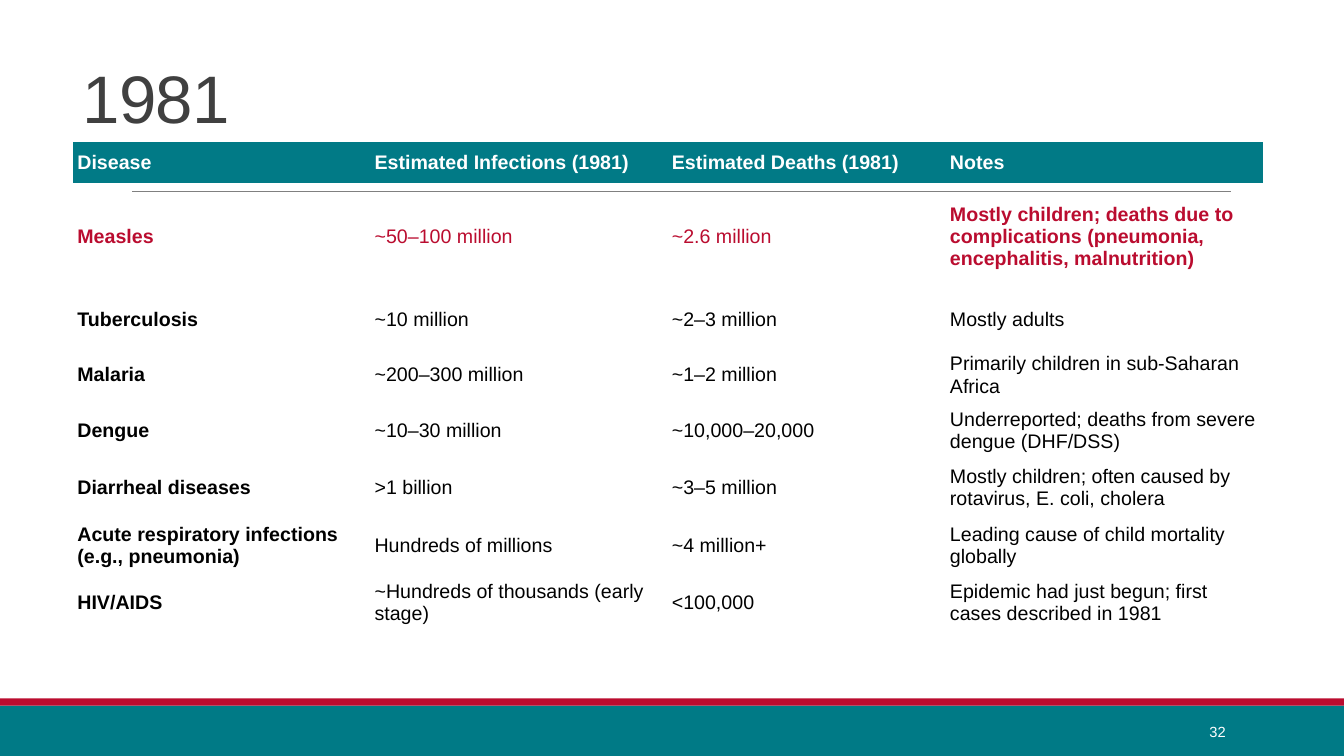
from pptx import Presentation
from pptx import util as u
from pptx.dml.color import RGBColor
from pptx.enum import shapes, text
from pptx.oxml.ns import qn
from lxml import etree

HUES = {
    "teal": "007A86", "head": "017A86", "red": "BA0C2F", "rule": "808080",
    "title": "404040", "black": "000000", "white": "FFFFFF",
}
PLAIN = "{2D5ABB26-0587-4C30-8999-92F81FD0307C}"
COLS = [7.49, 7.49, 7.01, 8]
TALL = [1.02, 2.74, 1.45, 1.27] + [1.45] * 4
ROWS = [
    ["Disease", "Estimated Infections (1981)", "Estimated Deaths (1981)", "Notes"],
    ["Measles", "~50–100 million", "~2.6 million",
     "Mostly children; deaths due to complications (pneumonia, encephalitis, malnutrition)"],
    ["Tuberculosis", "~10 million", "~2–3 million", "Mostly adults"],
    ["Malaria", "~200–300 million", "~1–2 million",
     "Primarily children in sub-Saharan Africa"],
    ["Dengue", "~10–30 million", "~10,000–20,000",
     "Underreported; deaths from severe dengue (DHF/DSS)"],
    ["Diarrheal diseases", ">1 billion", "~3–5 million",
     "Mostly children; often caused by rotavirus, E. coli, cholera"],
    ["Acute respiratory infections (e.g., pneumonia)", "Hundreds of millions",
     "~4 million+", "Leading cause of child mortality globally"],
    ["HIV/AIDS", "~Hundreds of thousands (early stage)", "<100,000",
     "Epidemic had just begun; first cases described in 1981"],
]


def put(item, **values):
    for name, value in values.items():
        setattr(item, name, value)


class Deck:
    font = "Arial"

    def __init__(self, wide, high):
        self.deck = Presentation()
        put(self.deck, slide_width=u.Cm(wide), slide_height=u.Cm(high))
        self.slide = self.deck.slides.add_slide(self.deck.slide_layouts[6])

    def hue(self, name):
        return RGBColor.from_string(HUES[name])

    def paint(self, fill, name):
        fill.solid()
        fill.fore_color.rgb = self.hue(name)

    def words(self, frame, line, size, hue, bold=False, **style):
        para = frame.paragraphs[0]
        put(para, **style)
        run = para.add_run()
        run.text = line
        put(run.font, name=self.font, size=u.Pt(size), bold=bold)
        run.font.color.rgb = self.hue(hue)
        return run

    def band(self, area, hue):
        band = self.slide.shapes.add_shape(
            shapes.MSO_SHAPE.RECTANGLE, *map(u.Cm, area))
        band.shadow.inherit = False
        self.paint(band.fill, hue)
        band.line.fill.background()

    def rule(self, ends, hue, width):
        rule = self.slide.shapes.add_connector(
            shapes.MSO_CONNECTOR.STRAIGHT, *map(u.Cm, ends))
        rule.line.width = u.Pt(width)
        rule.line.color.rgb = self.hue(hue)
        etree.SubElement(rule._element.spPr, qn("a:effectLst"))

    def label(self, area, line, size, hue, anchor, **style):
        frame = self.slide.shapes.add_textbox(*map(u.Cm, area)).text_frame
        put(frame, word_wrap=True, vertical_anchor=anchor)
        return self.words(frame, line, size, hue, **style)

    def table(self, left, top, cols, tall, rows):
        area = map(u.Cm, (left, top, sum(cols), sum(tall)))
        table = self.slide.shapes.add_table(len(rows), len(cols), *area).table
        table.horz_banding = False
        table._tbl.tblPr.find(qn("a:tableStyleId")).text = PLAIN
        for col, width in zip(table.columns, cols):
            col.width = u.Cm(width)
        for r, (row, high) in enumerate(zip(rows, tall)):
            table.rows[r].height = u.Cm(high)
            hue = {0: "white", 1: "red"}.get(r, "black")
            for c, line in enumerate(row):
                cell = table.cell(r, c)
                put(cell, vertical_anchor=text.MSO_ANCHOR.MIDDLE,
                    margin_left=u.Cm(0.12), margin_right=u.Cm(0.12),
                    margin_top=u.Cm(0.07), margin_bottom=u.Cm(0.07))
                if r == 0:
                    self.paint(cell.fill, "head")
                else:
                    cell.fill.background()
                bold = r == 0 or c == 0 or (r, c) == (1, 3)
                self.words(cell.text_frame, line, 14, hue, bold)


def main():
    deck = Deck(33.87, 19.05)
    deck.band((0, 17.78, 33.87, 1.27), "teal")
    deck.band((0, 17.6, 33.87, 0.18), "red")
    deck.rule((3.33, 4.83, 31.01, 4.83), "rule", 0.5)
    title = deck.label((1.83, 1.5, 27.94, 2.08), "1981", 48, "title",
                       text.MSO_ANCHOR.BOTTOM, line_spacing=0.85)
    title.font._element.set("spc", "-50")
    deck.table(1.83, 3.58, COLS, TALL, ROWS)
    deck.label((27.51, 17.93, 3.63, 1.02), "32", 10.5, "white",
               text.MSO_ANCHOR.MIDDLE, alignment=text.PP_ALIGN.RIGHT)
    deck.deck.save("out.pptx")


if __name__ == "__main__":
    main()
